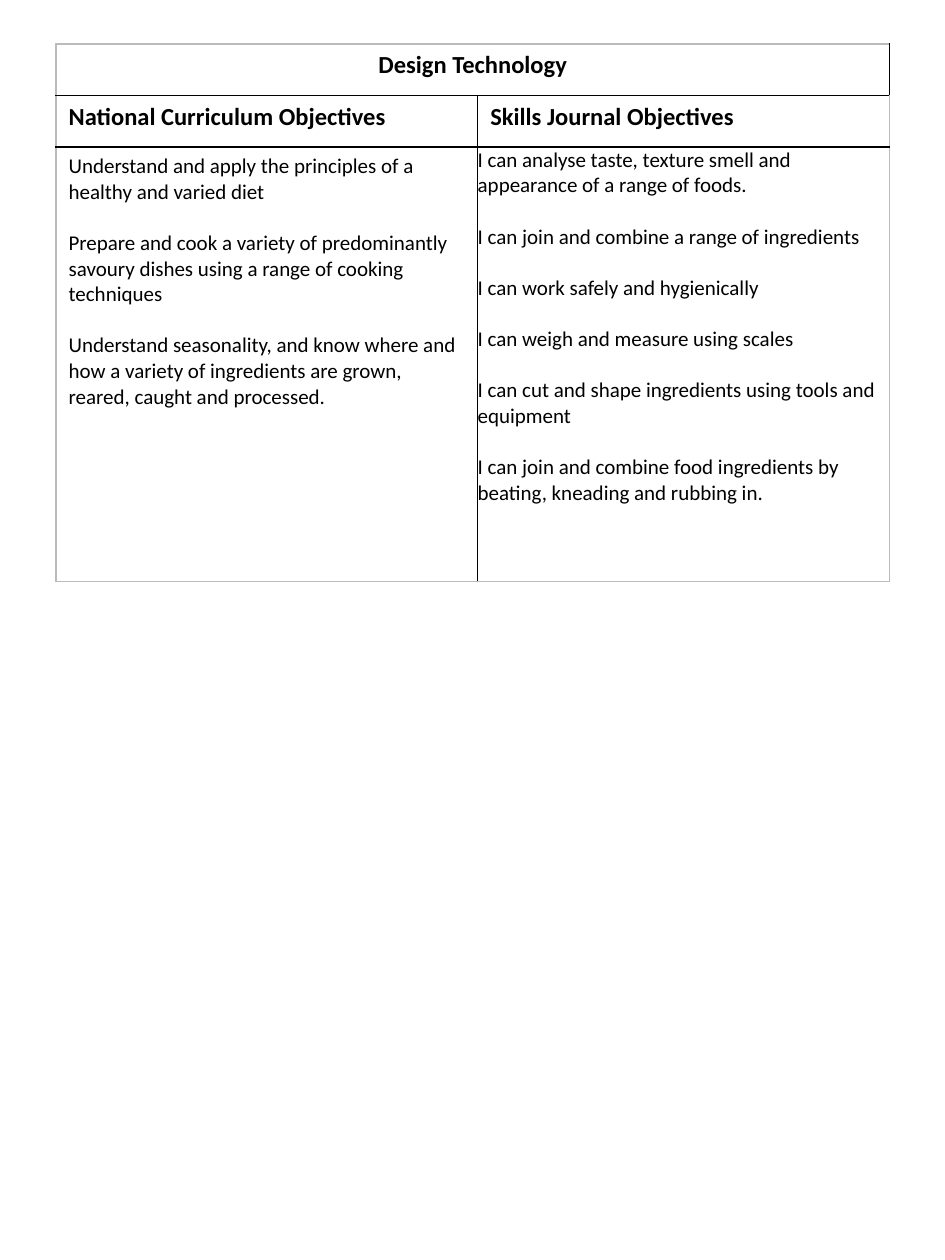
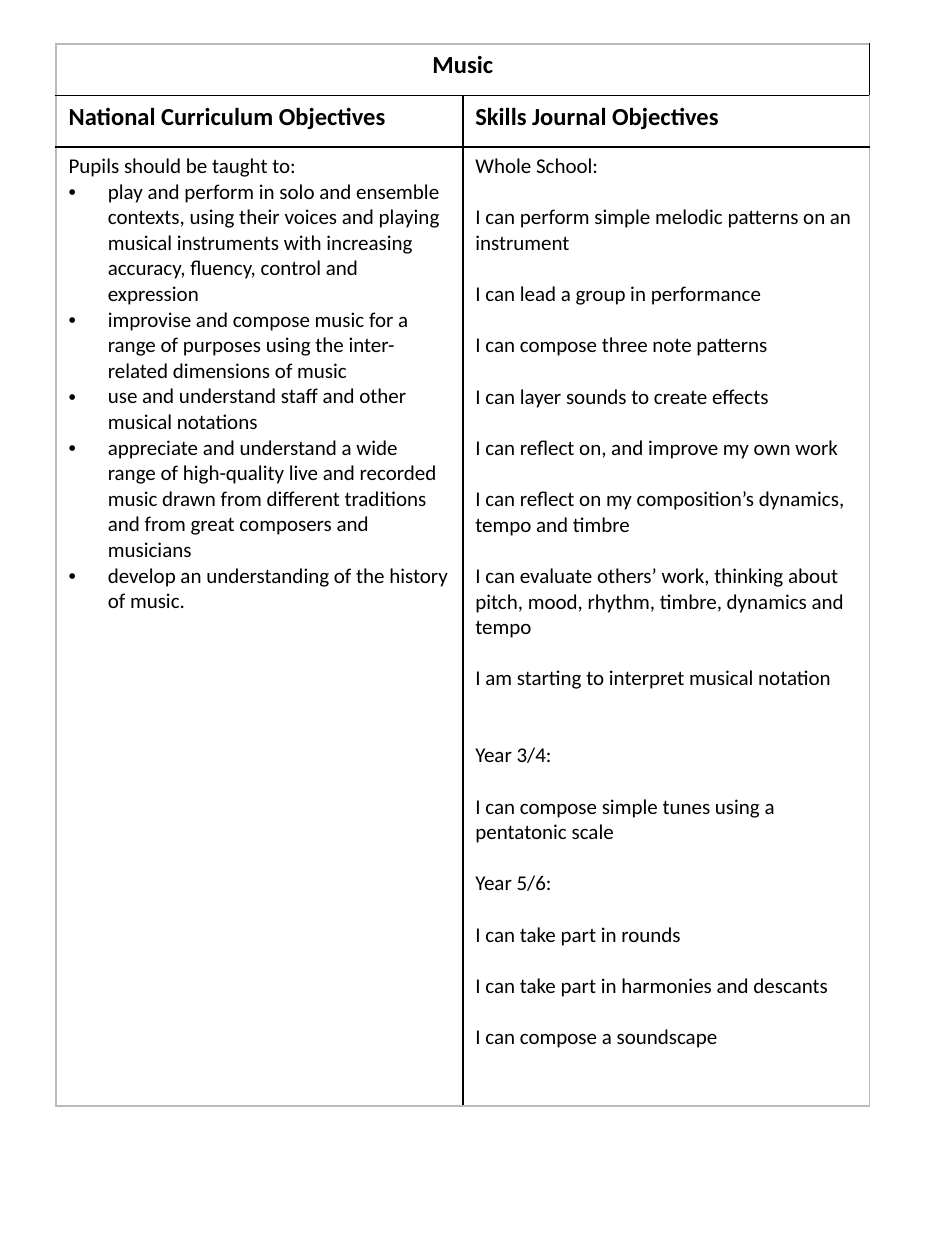
from lxml import etree
from pptx import Presentation
from pptx.dml.color import RGBColor
from pptx.enum import text
from pptx.oxml import parse_xml
from pptx.oxml.ns import nsdecls, qn
from pptx.util import Cm, Pt

FONT, BLACK, GREY, WHITE = "Calibri", "000000", "BBBBBB", "FFFFFF"
LINE = 14.65  # height in points of one line of body text
INDENT = Cm(0.79)
HEADINGS = ["National Curriculum Objectives", "Skills Journal Objectives"]

subjects = [
    dict(
        title="Design Technology", widths=[8.5, 8.3], body_height=8.75, flush_right=True,
        national=[
            "Understand and apply the principles of a healthy and varied diet",
            "Prepare and cook a variety of predominantly savoury dishes using a range of cooking techniques",
            "Understand seasonality, and know where and how a variety of ingredients are grown, "
            "reared, caught and processed.",
        ],
        bullets=False,
        skills=[
            "I can analyse taste, texture smell and appearance of a range of foods.",
            "I can join and combine a range of ingredients",
            "I can work safely and hygienically",
            "I can weigh and measure using scales",
            "I can cut and shape ingredients using tools and equipment",
            "I can join and combine food ingredients by beating, kneading and rubbing in.",
        ],
    ),
    dict(
        title="Music", widths=[8.2, 8.2], body_height=19.33, flush_right=False,
        national=[
            "Pupils should be taught to:",
            "play and perform in solo and ensemble contexts, using their voices and playing musical "
            "instruments with increasing accuracy, fluency, control and expression",
            "improvise and compose music for a range of purposes using the inter-related dimensions of music",
            "use and understand staff and other musical notations",
            "appreciate and understand a wide range of high-quality live and recorded music drawn from "
            "different traditions and from great composers and musicians",
            "develop an understanding of the history of music.",
        ],
        bullets=True,
        skills=[
            "Whole School:",
            "I can perform simple melodic patterns on an instrument",
            "I can lead a group in performance",
            "I can compose three note patterns",
            "I can layer sounds to create effects",
            "I can reflect on, and improve my own work",
            "I can reflect on my composition’s dynamics, tempo and timbre",
            "I can evaluate others’ work, thinking about pitch, mood, rhythm, timbre, dynamics and tempo",
            "I am starting to interpret musical notation",
            "Year 3/4:",
            "I can compose simple tunes using a pentatonic scale",
            "Year 5/6:",
            "I can take part in rounds",
            "I can take part in harmonies and descants",
            "I can compose a soundscape",
        ],
    ),
]


def write(tf, words, first=False, size=12, bold=False, align=None, gap=0, bullet=False):
    """Write one paragraph; gap is the number of lines left free above it."""
    p = tf.paragraphs[0] if first else tf.add_paragraph()
    p.alignment = align
    if gap:
        p.space_before = Pt(gap * LINE)
    if bullet:
        pPr = p._p.get_or_add_pPr()
        pPr.set("marL", str(INDENT))
        pPr.set("indent", str(-INDENT))
        etree.SubElement(pPr, qn("a:buFont")).set("typeface", "Arial")
        etree.SubElement(pPr, qn("a:buChar")).set("char", "•")
    r = p.add_run()
    r.text = words
    r.font.name, r.font.size, r.font.bold = FONT, Pt(size), bold
    r.font.color.rgb = RGBColor.from_string(BLACK)


def set_borders(cell, **sides):
    """Draw each side (L, R, T, B) given as a (colour, points) pair."""
    tcPr = cell._tc.get_or_add_tcPr()
    for side, (colour, points) in sides.items():
        tcPr.append(parse_xml(
            f'<a:ln{side} {nsdecls("a")} w="{Pt(points)}"><a:solidFill>'
            f'<a:srgbClr val="{colour}"/></a:solidFill></a:ln{side}>'))


prs = Presentation()
prs.slide_width, prs.slide_height = Cm(19.05), Cm(25.4)

for subject in subjects:
    s = prs.slides.add_slide(prs.slide_layouts[6])
    heights = [1.04, 1.04, subject["body_height"]]
    table = s.shapes.add_table(3, 2, Cm(1.13), Cm(0.89),
                               Cm(sum(subject["widths"])), Cm(sum(heights))).table
    table.first_row = table.horz_banding = False
    for column, width in zip(table.columns, subject["widths"]):
        column.width = Cm(width)
    for row, height in zip(table.rows, heights):
        row.height = Cm(height)

    outer, inner, heavy = (GREY, 1), (BLACK, 1), (BLACK, 1.5)
    levels = [outer, inner, heavy, outer]
    for i in range(3):
        for j in range(2):
            cell = table.cell(i, j)
            set_borders(cell, L=inner if j else outer, R=outer if j else inner,
                        T=levels[i], B=levels[i + 1])
            cell.fill.solid()
            cell.fill.fore_color.rgb = RGBColor.from_string(WHITE)

    table.cell(0, 0).merge(table.cell(0, 1))
    write(table.cell(0, 0).text_frame, subject["title"], first=True, size=14, bold=True,
          align=text.PP_ALIGN.CENTER)
    for j, heading in enumerate(HEADINGS):
        write(table.cell(1, j).text_frame, heading, first=True, size=14, bold=True)

    national, skills = table.cell(2, 0), table.cell(2, 1)
    for i, words in enumerate(subject["national"]):
        listed = subject["bullets"] and i > 0
        write(national.text_frame, words, first=i == 0, bullet=listed,
              gap=0 if i == 0 or listed else 1)
    for i, words in enumerate(subject["skills"]):
        write(skills.text_frame, words, first=i == 0,
              gap=0 if i == 0 else 2 if words == "Year 3/4:" else 1)
    if subject["flush_right"]:
        skills.margin_left = skills.margin_right = skills.margin_top = skills.margin_bottom = 0

prs.save("out.pptx")
